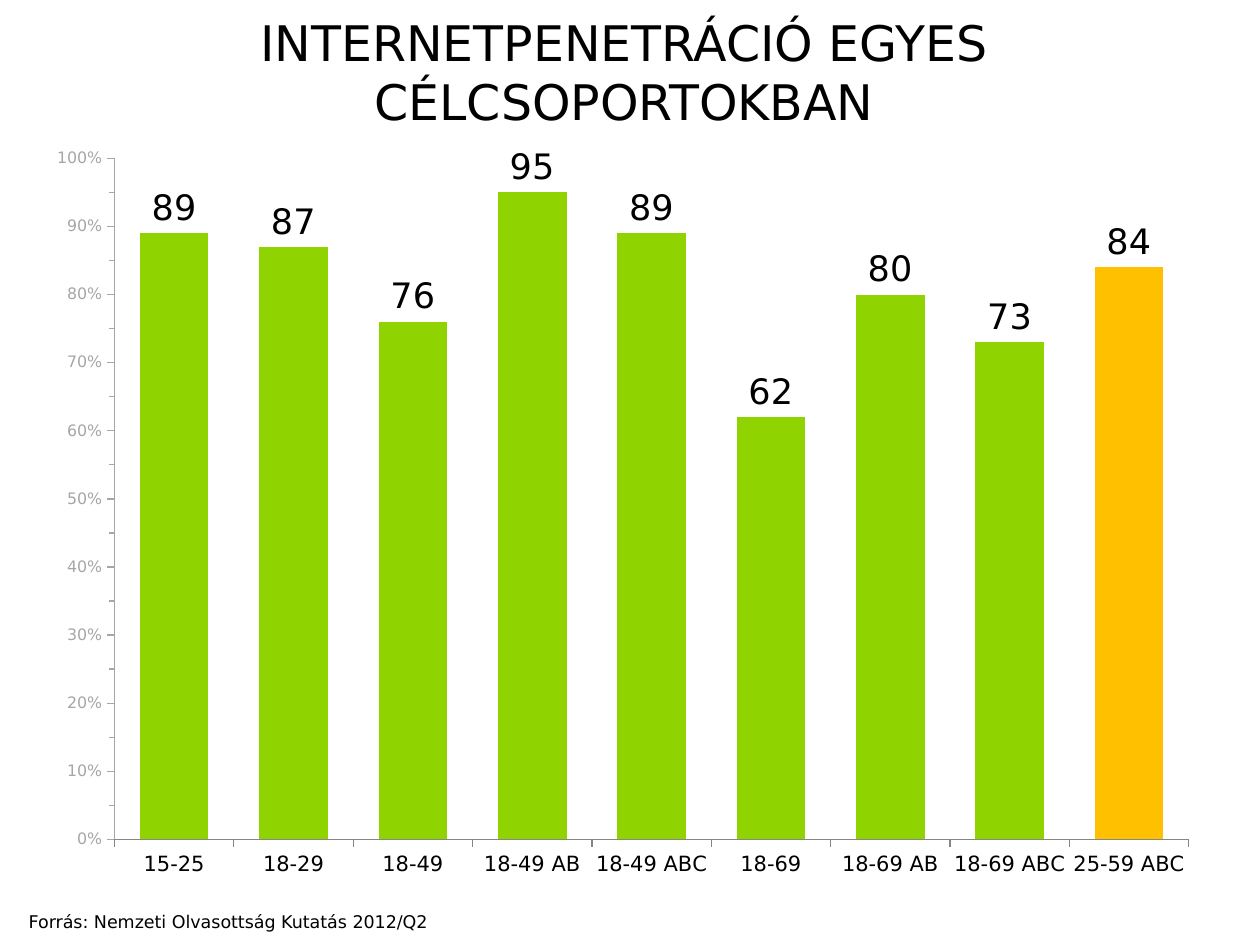
import pptx
import pptx.chart.data
import pptx.dml.color
import pptx.enum.chart
import pptx.enum.text
import pptx.oxml
import pptx.util
from pptx.util import Cm

TITLE = "INTERNETPENETRÁCIÓ EGYES CÉLCSOPORTOKBAN"
SOURCE = "Forrás: Nemzeti Olvasottság Kutatás 2012/Q2"
PENETRATION = {
    "15-25": 89, "18-29": 87, "18-49": 76, "18-49 AB": 95, "18-49 ABC": 89,
    "18-69": 62, "18-69 AB": 80, "18-69 ABC": 73, "25-59 ABC": 84,
}
HIGHLIGHT = "25-59 ABC"
PLOT_AREA = {"x": 0.064, "y": 0.016, "w": 0.913, "h": 0.904}

THEME = {
    "font": "DejaVu Sans",
    "text": "000000", "bar": "8FD400", "highlight": "FFC000",
    "muted": "A6A6A6", "axis": "868686",
    "title": 28, "value": 20, "chart": 18, "category": 12, "source": 10, "scale": 9,
}


def rgb(name):
    return pptx.dml.color.RGBColor.from_string(THEME[name])


def style_font(font, size, color="text"):
    font.name = THEME["font"]
    font.size = pptx.util.Pt(THEME[size])
    font.bold = False
    font.color.rgb = rgb(color)


def fill_text(shape, text, size, align, wrap):
    tf = shape.text_frame
    tf.text = text
    tf.word_wrap = wrap
    tf.auto_size = pptx.enum.text.MSO_AUTO_SIZE.SHAPE_TO_FIT_TEXT
    tf.vertical_anchor = pptx.enum.text.MSO_ANCHOR.TOP
    p = tf.paragraphs[0]
    p.alignment = align
    style_font(p.runs[0].font, size)


def style_axis(axis, size, text_color, line_color):
    axis.has_major_gridlines = False
    axis.major_tick_mark = pptx.enum.chart.XL_TICK_MARK.OUTSIDE
    style_font(axis.tick_labels.font, size, text_color)
    axis.format.line.color.rgb = rgb(line_color)
    axis.format.line.width = pptx.util.Pt(0.75)


def fix_plot_area(chart):
    """Give the inner plot area a manual layout, as fractions of the chart."""
    modes = "".join(f'<c:{k}Mode val="edge"/>' for k in "xy")
    sizes = "".join(f'<c:{k} val="{v}"/>' for k, v in PLOT_AREA.items())
    layout = pptx.oxml.parse_xml(
        '<c:layout xmlns:c="http://schemas.openxmlformats.org/drawingml/2006/chart">'
        f'<c:manualLayout><c:layoutTarget val="inner"/>{modes}{sizes}'
        "</c:manualLayout></c:layout>")
    plot_area = chart.element.chart.plotArea
    for old in plot_area.findall(layout.tag):
        plot_area.remove(old)
    plot_area.insert(0, layout)


def add_penetration_chart(s):
    data = pptx.chart.data.CategoryChartData()
    data.categories = list(PENETRATION)
    data.add_series("Series 1", list(PENETRATION.values()))
    chart = s.shapes.add_chart(
        pptx.enum.chart.XL_CHART_TYPE.COLUMN_CLUSTERED,
        Cm(0.79), Cm(2.95), Cm(23.72), Cm(15.19), data).chart
    chart.has_legend = False
    chart.has_title = False
    style_font(chart.font, "chart")
    fix_plot_area(chart)

    style_axis(chart.category_axis, "category", "text", "axis")
    scale = chart.value_axis
    style_axis(scale, "scale", "muted", "muted")
    scale.minor_tick_mark = pptx.enum.chart.XL_TICK_MARK.OUTSIDE
    scale.minimum_scale, scale.maximum_scale, scale.major_unit = 0, 100, 10
    scale.minor_unit = 5
    scale.tick_labels.number_format = "0\\%"
    scale.tick_labels.number_format_is_linked = False

    plot = chart.plots[0]
    plot.gap_width = 74
    plot.vary_by_categories = False
    series = plot.series[0]
    highlighted = series.points[list(PENETRATION).index(HIGHLIGHT)]
    for part, color in ((series, "bar"), (highlighted, "highlight")):
        part.format.fill.solid()
        part.format.fill.fore_color.rgb = rgb(color)

    labels = series.data_labels
    labels.show_value = True
    labels.number_format = "#,##0"
    labels.number_format_is_linked = False
    labels.position = pptx.enum.chart.XL_LABEL_POSITION.OUTSIDE_END
    style_font(labels.font, "value")


def main():
    prs = pptx.Presentation()
    prs.slide_width, prs.slide_height = Cm(25.4), Cm(19.05)
    s = prs.slides.add_slide(prs.slide_layouts.get_by_name("Title Only"))
    add_penetration_chart(s)

    title = s.shapes.title
    title.left, title.top, title.width, title.height = Cm(2.16), Cm(0.13), Cm(20.83), Cm(1.45)
    fill_text(title, TITLE, "title", pptx.enum.text.PP_ALIGN.CENTER, True)

    source = s.shapes.add_textbox(Cm(0.33), Cm(18.24), Cm(8.79), Cm(0.69))
    fill_text(source, SOURCE, "source", pptx.enum.text.PP_ALIGN.LEFT, False)
    prs.save("out.pptx")


if __name__ == "__main__":
    main()
